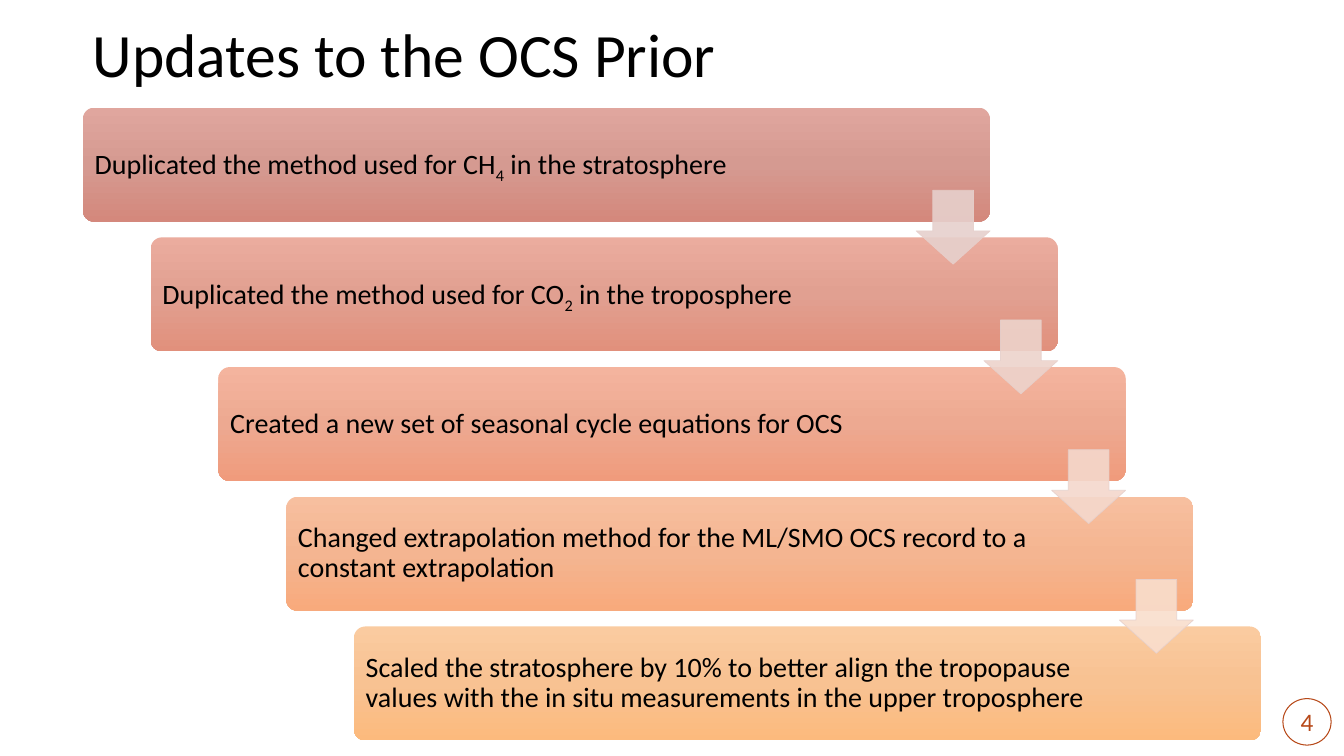
import copy

import pptx
import pptx.dml.color
import pptx.enum.shapes
import pptx.enum.text
import pptx.oxml
import pptx.oxml.ns
import pptx.util

Pt = pptx.util.Pt
RGBColor = pptx.dml.color.RGBColor
MSO_SHAPE = pptx.enum.shapes.MSO_SHAPE
PP_ALIGN = pptx.enum.text.PP_ALIGN

FONT = "Calibri"
BLACK = RGBColor(0x00, 0x00, 0x00)
RUST = RGBColor(0xB7, 0x49, 0x19)
ARROW_LINE = RGBColor(0xE6, 0xD0, 0xCC)
ARROW_FILLS = [
    RGBColor(0xE6, 0xD0, 0xCC),
    RGBColor(0xED, 0xD3, 0xCB),
    RGBColor(0xF4, 0xD8, 0xCC),
    RGBColor(0xF9, 0xDE, 0xCD),
]
# Top, middle and bottom colour of each step
STEP_GRADIENTS = [
    (RGBColor(0xE0, 0xA6, 0x9E), RGBColor(0xD5, 0x9A, 0x91), RGBColor(0xD4, 0x88, 0x7C)),
    (RGBColor(0xEB, 0xAC, 0x9E), RGBColor(0xE1, 0xA0, 0x91), RGBColor(0xE1, 0x90, 0x7C)),
    (RGBColor(0xF4, 0xB4, 0x9E), RGBColor(0xED, 0xA9, 0x91), RGBColor(0xF0, 0x9B, 0x7C)),
    (RGBColor(0xF7, 0xBF, 0x9F), RGBColor(0xF4, 0xB5, 0x91), RGBColor(0xF8, 0xAA, 0x7C)),
    (RGBColor(0xFA, 0xCB, 0xA0), RGBColor(0xF8, 0xC2, 0x92), RGBColor(0xFC, 0xBA, 0x7D)),
]
# Each step is a list of runs; every second run is a subscript
STEP_TEXTS = [
    ["Duplicated the method used for CH", "4", " in the stratosphere"],
    ["Duplicated the method used for CO", "2", " in the troposphere"],
    ["Created a new set of seasonal cycle equations for OCS"],
    ["Changed extrapolation method for the ML/SMO OCS record to a constant extrapolation"],
    ["Scaled the stratosphere by 10% to better align the tropopause "
     "values with the in situ measurements in the upper troposphere"],
]
STEP_WIDTH, STEP_HEIGHT = 648, 81.4
ARROW_SIZE, ARROW_DROP = 52.8, 59


def write_text(shape, runs, size, color, inset=None):
    frame = shape.text_frame
    frame.word_wrap = True
    frame.vertical_anchor = pptx.enum.text.MSO_ANCHOR.MIDDLE
    if inset is not None:
        frame.margin_left = frame.margin_right = Pt(inset)
        frame.margin_top = frame.margin_bottom = Pt(inset)
    paragraph = frame.paragraphs[0]
    for index, text in enumerate(runs):
        run = paragraph.add_run()
        run.text = text
        run.font.name = FONT
        run.font.size = Pt(size)
        run.font.color.rgb = color
        if index % 2:
            run._r.get_or_add_rPr().set("baseline", "-25000")
    return paragraph


def add_shape(slide, kind, left, top, width, height):
    shape = slide.shapes.add_shape(kind, Pt(left), Pt(top), Pt(width), Pt(height))
    shape.shadow.inherit = False
    return shape


def fill_gradient(shape, colors):
    shape.fill.gradient()
    shape.fill.gradient_angle = 270
    stop_list = next(shape._element.iter(pptx.oxml.ns.qn("a:gsLst")))
    middle = copy.deepcopy(stop_list[0])
    middle.set("pos", "50000")
    stop_list.insert(1, middle)
    for stop, color in zip(shape.fill.gradient_stops, colors):
        stop.color.rgb = color


def add_title(slide, left, top, width, height):
    box = slide.shapes.add_textbox(Pt(left), Pt(top), Pt(width), Pt(height))
    paragraph = write_text(box, ["Updates to the OCS Prior"], 44, BLACK)
    paragraph.line_spacing = 0.9


def add_step(slide, left, top, text_width, runs, colors):
    step = add_shape(slide, MSO_SHAPE.ROUNDED_RECTANGLE, left, top, STEP_WIDTH, STEP_HEIGHT)
    step.adjustments[0] = 0.1
    step.line.fill.background()
    fill_gradient(step, colors)
    label = slide.shapes.add_textbox(
        Pt(left + 2.4), Pt(top + 2.4), Pt(text_width), Pt(STEP_HEIGHT - 4.8))
    paragraph = write_text(label, runs, 20, BLACK, inset=6)
    paragraph.line_spacing = 0.9
    paragraph.space_after = Pt(7)


def add_arrow(slide, left, top, color):
    arrow = add_shape(slide, MSO_SHAPE.DOWN_ARROW, left, top, ARROW_SIZE, ARROW_SIZE)
    arrow.adjustments[0] = 0.55
    arrow.adjustments[1] = 0.45
    arrow.fill.solid()
    arrow.fill.fore_color.rgb = color
    arrow.line.color.rgb = ARROW_LINE
    arrow.line.width = Pt(0.5)
    # Fill and outline are 90% opaque
    for element in arrow._element.spPr.iter(pptx.oxml.ns.qn("a:srgbClr")):
        alpha = pptx.oxml.parse_xml(
            f'<a:alpha {pptx.oxml.ns.nsdecls("a")} val="90000"/>')
        element.append(alpha)


def add_staircase(slide, left, top, width, height):
    last = len(STEP_TEXTS) - 1
    across = (width - STEP_WIDTH) / last
    down = (height - STEP_HEIGHT) / last
    corners = [(left + i * across, top + i * down) for i in range(last + 1)]
    # Steps
    for i, (x, y) in enumerate(corners):
        text_width = 551 if i == 0 else 542
        add_step(slide, x, y, text_width, STEP_TEXTS[i], STEP_GRADIENTS[i])
    # Arrows lie over the steps, flush with each right edge
    for (x, y), color in zip(corners, ARROW_FILLS):
        add_arrow(slide, x + STEP_WIDTH - ARROW_SIZE, y + ARROW_DROP, color)


def add_page_number(slide, left, top, width, height):
    badge = add_shape(slide, MSO_SHAPE.OVAL, left, top, width, height)
    badge.fill.background()
    badge.line.color.rgb = RUST
    badge.line.width = Pt(0.75)
    paragraph = write_text(badge, ["4"], 18, RUST, inset=0)
    paragraph.alignment = PP_ALIGN.CENTER


def main():
    presentation = pptx.Presentation()
    presentation.slide_width = Pt(960)
    presentation.slide_height = Pt(540)
    slide = presentation.slides.add_slide(presentation.slide_layouts[6])
    add_title(slide, 59.2, -10.8, 828, 104.4)
    add_staircase(slide, 59.2, 76.9, 841.6, 452)
    add_page_number(slide, 916.4, 499, 34.4, 33.2)
    presentation.save("out.pptx")


if __name__ == "__main__":
    main()
